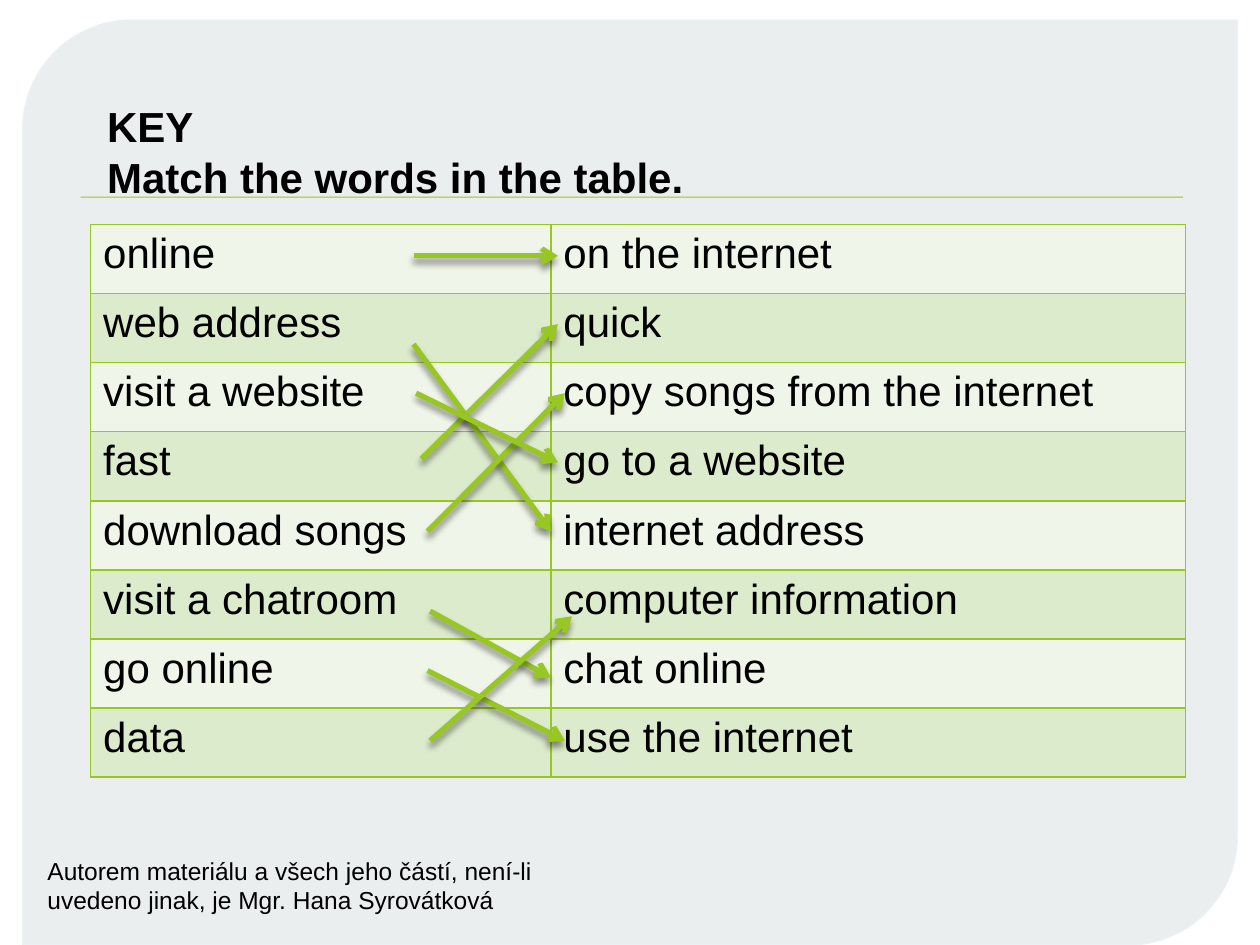
from lxml import etree
from pptx import Presentation
from pptx.dml.color import RGBColor
from pptx.enum.shapes import MSO_CONNECTOR, MSO_SHAPE
from pptx.enum.text import MSO_ANCHOR, PP_ALIGN
from pptx.oxml.ns import qn
from pptx.util import Pt

STRAIGHT = MSO_CONNECTOR.STRAIGHT
PANEL, RECTANGLE = MSO_SHAPE.ROUND_2_DIAG_RECTANGLE, MSO_SHAPE.RECTANGLE
TOP, LEFT = MSO_ANCHOR.TOP, PP_ALIGN.LEFT
TITLE_ONLY = 5
FONT = "Arial"
COLORS = {
    "panel": "DFE5E6", "panel_edge": "EBF2F3", "green": "98C723",
    "band_light": "EFF5E8", "band_dark": "DDEBCD", "text": "000000",
}

WORD_ROWS = [
    ("online", "on the internet"),
    ("web address", "quick"),
    ("visit a website", "copy songs from the internet"),
    ("fast", "go to a website"),
    ("download songs", "internet address"),
    ("visit a chatroom", "computer information"),
    ("go online", "chat online"),
    ("data", "use the internet"),
]
# Start and end of each answer arrow, in points from the table's corner
ARROWS = [
    (184.5, 68.5, 263, 175.5),
    (189, 134, 267, 57),
    (192.5, 175.5, 271, 96.5),
    (194, 221, 263, 259),
    (192.5, 255, 271, 295),
    (194, 295, 275, 224),
    (186, 96.5, 267, 136),
    (184.5, 18, 267, 18),
]


def rgb(name):
    return RGBColor.from_string(COLORS[name])


def add_child(parent, tag, **attributes):
    child = etree.SubElement(parent, qn(tag))
    for key, value in attributes.items():
        child.set(key, str(value))
    return child


def set_alpha(fill_parent, percent):
    color = fill_parent.find(qn("a:solidFill"))[0]
    add_child(color, "a:alpha", val=percent * 1000)


def add_shadow(shape, alpha, blur, distance):
    effects = add_child(shape._element.spPr, "a:effectLst")
    shadow = add_child(effects, "a:outerShdw", blurRad=Pt(blur), dist=Pt(distance),
                       dir=90 * 60000, algn="ctr", rotWithShape=0)
    color = add_child(shadow, "a:srgbClr", val=COLORS["text"])
    add_child(color, "a:alpha", val=alpha * 1000)


def format_text(frame, size, bold=False):
    for paragraph in frame.paragraphs:
        paragraph.alignment = LEFT
        for span in paragraph.runs:
            span.font.name = FONT
            span.font.size = Pt(size)
            span.font.bold = bold
            span.font.color.rgb = rgb("text")


def draw_background(page, left, top, width, height):
    panel = page.shapes.add_shape(PANEL, Pt(left), Pt(top), Pt(width), Pt(height))
    panel.adjustments[0] = 0.118
    panel.adjustments[1] = 0
    panel.shadow.inherit = False
    panel.fill.solid()
    panel.fill.fore_color.rgb = rgb("panel")
    set_alpha(panel._element.spPr, 65)
    panel.line.color.rgb = rgb("panel_edge")
    panel.line.width = Pt(0.87)
    set_alpha(panel.line._ln, 88)

    # Thin rule under the title
    rule = page.shapes.add_shape(RECTANGLE, Pt(left + 33), Pt(top + 100.8),
                                 Pt(630), Pt(0.7))
    rule.fill.solid()
    rule.fill.fore_color.rgb = rgb("green")
    rule.line.fill.background()
    add_shadow(rule, 75, 1, 1)


def draw_title(page, left, top, width, height):
    title = page.shapes.title
    title.left, title.top, title.width, title.height = map(Pt, (left, top, width, height))
    page.shapes._spTree.append(title._element)  # in front of the panel
    frame = title.text_frame
    frame.text = "KEY\nMatch the words in the table."
    frame.word_wrap = True
    frame.vertical_anchor = TOP
    format_text(frame, 24, bold=True)


def set_borders(cell):
    properties = cell._tc.get_or_add_tcPr()
    for index, side in enumerate(("a:lnL", "a:lnR", "a:lnT", "a:lnB")):
        border = add_child(properties, side, w=Pt(1))
        fill = add_child(border, "a:solidFill")
        add_child(fill, "a:srgbClr", val=COLORS["green"])
        properties.insert(index, border)


def draw_word_table(page, left, top, width, height):
    table = page.shapes.add_table(len(WORD_ROWS), 2, Pt(left), Pt(top),
                                  Pt(width), Pt(height)).table
    first_width = 263
    table.columns[0].width = Pt(first_width)
    table.columns[1].width = Pt(width - first_width)
    for row, words in enumerate(WORD_ROWS):
        table.rows[row].height = Pt(height / len(WORD_ROWS))
        for column, word in enumerate(words):
            cell = table.cell(row, column)
            cell.text = word
            format_text(cell.text_frame, 24)
            cell.fill.solid()
            cell.fill.fore_color.rgb = rgb("band_dark" if row % 2 else "band_light")
            set_borders(cell)


def draw_arrows(page, left, top):
    for start_x, start_y, end_x, end_y in ARROWS:
        arrow = page.shapes.add_connector(
            STRAIGHT, Pt(left + start_x), Pt(top + start_y),
            Pt(left + end_x), Pt(top + end_y))
        arrow.line.color.rgb = rgb("green")
        arrow.line.width = Pt(3)
        add_child(arrow.line._ln, "a:tailEnd", type="arrow")
        add_shadow(arrow, 43, 4, 3)


def draw_credit(page, left, top, width, height):
    box = page.shapes.add_textbox(Pt(left), Pt(top), Pt(width), Pt(height))
    box.text_frame.word_wrap = True
    box.text_frame.text = ("Autorem materiálu a všech jeho částí, není-li "
                           "uvedeno jinak, je Mgr. Hana Syrovátková")
    format_text(box.text_frame, 14)


def main():
    deck = Presentation()
    deck.slide_width, deck.slide_height = Pt(720), Pt(540)
    page = deck.slides.add_slide(deck.slide_layouts[TITLE_ONLY])
    draw_background(page, 13, 11.5, 694, 528.5 - 11.5 + 11.5)
    draw_word_table(page, 51.8, 128.2, 625.7, 316)
    draw_title(page, 54, 54, 365, 65.5)
    draw_arrows(page, 51.8, 128.2)
    draw_credit(page, 20, 485.5, 309, 39.5)
    deck.save("out.pptx")


if __name__ == "__main__":
    main()
